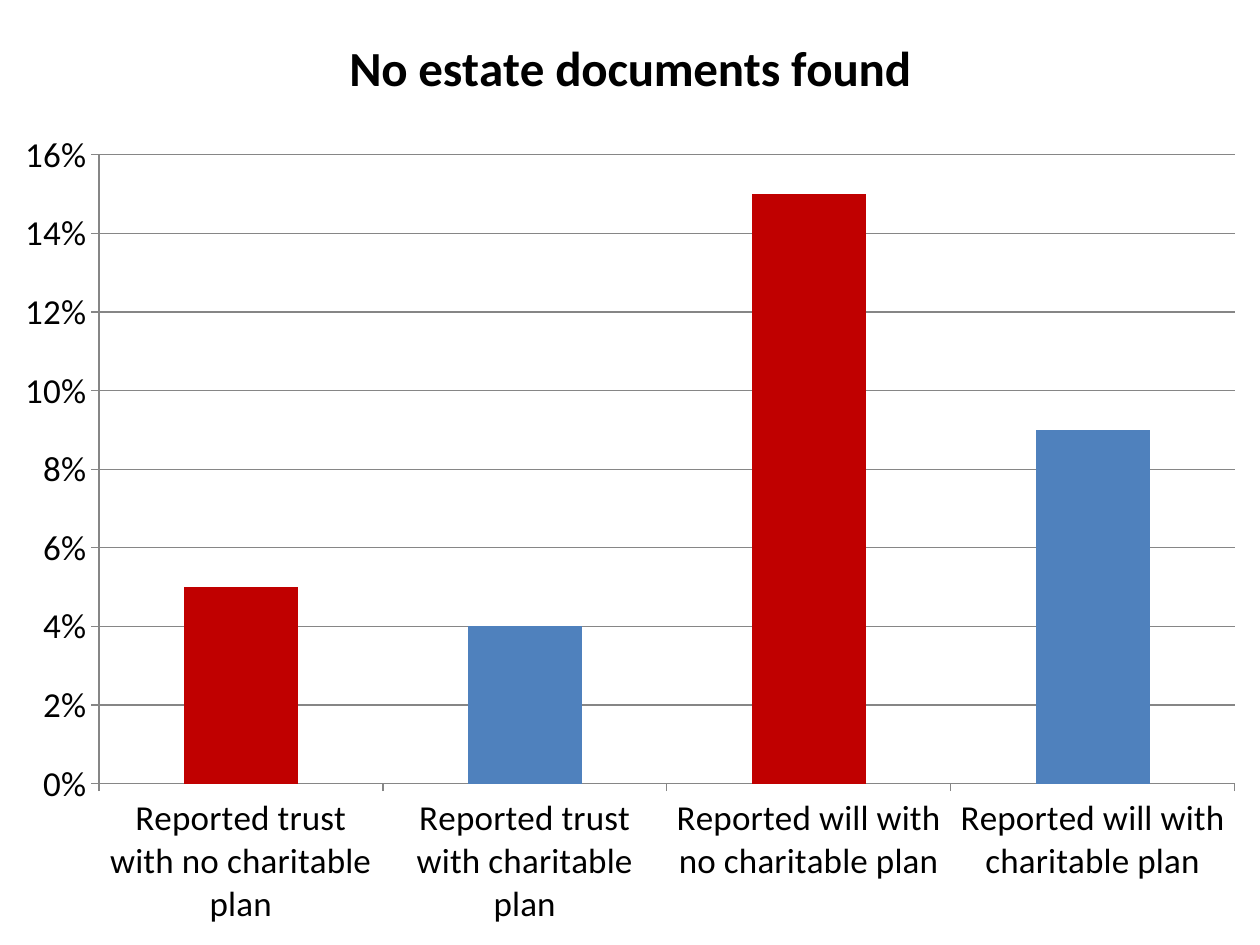
from pptx import Presentation
from pptx.chart.data import CategoryChartData
from pptx.dml.color import RGBColor
from pptx.enum.chart import XL_CHART_TYPE, XL_TICK_MARK
from pptx.util import Inches, Pt

COLUMN = XL_CHART_TYPE.COLUMN_CLUSTERED
OUTSIDE = XL_TICK_MARK.OUTSIDE

TITLE = "No estate documents found"
BARS = [
    ("Reported trust with no charitable plan", 0.05, "C00000"),
    ("Reported trust with charitable plan", 0.04, "4F81BD"),
    ("Reported will with no charitable plan", 0.15, "C00000"),
    ("Reported will with charitable plan", 0.09, "4F81BD"),
]
FONT, INK, GRID = "Calibri", "000000", "868686"


def paint(part, color):
    part.solid()
    part.fore_color.rgb = RGBColor.from_string(color)


def style(font, size, bold=False):
    font.name, font.size, font.bold = FONT, Pt(size), bold
    font.color.rgb = RGBColor.from_string(INK)


def rule(line):
    line.width = Pt(0.75)
    paint(line.fill, GRID)


deck = Presentation()
deck.slide_width, deck.slide_height = Inches(10), Inches(7.5)
slide = deck.slides.add_slide(deck.slide_layouts[6])

data = CategoryChartData(number_format="0%")
data.categories = [name for name, _, _ in BARS]
data.add_series(TITLE, [value for _, value, _ in BARS])
frame = slide.shapes.add_chart(
    COLUMN, 0, 0, deck.slide_width, deck.slide_height, data)
chart = frame.chart
style(chart.font, 10)
chart.has_legend = False
chart.has_title = True
head = chart.chart_title.text_frame
head.text = TITLE
style(head.paragraphs[0].runs[0].font, 28, True)

plot = chart.plots[0]
plot.gap_width = 150
plot.vary_by_categories = False
bars = plot.series[0]
bars.invert_if_negative = False
paint(bars.format.fill, BARS[-1][2])
for i, (_, _, color) in enumerate(BARS):
    if color != BARS[-1][2]:
        paint(bars.points[i].format.fill, color)

for axis in (chart.category_axis, chart.value_axis):
    style(axis.tick_labels.font, 20)
    axis.major_tick_mark = OUTSIDE
    rule(axis.format.line)

scale = chart.value_axis
scale.minimum_scale, scale.maximum_scale, scale.major_unit = 0, 0.16, 0.02
scale.tick_labels.number_format = "0%"
scale.tick_labels.number_format_is_linked = False
scale.has_major_gridlines = True
rule(scale.major_gridlines.format.line)

deck.save("out.pptx")
